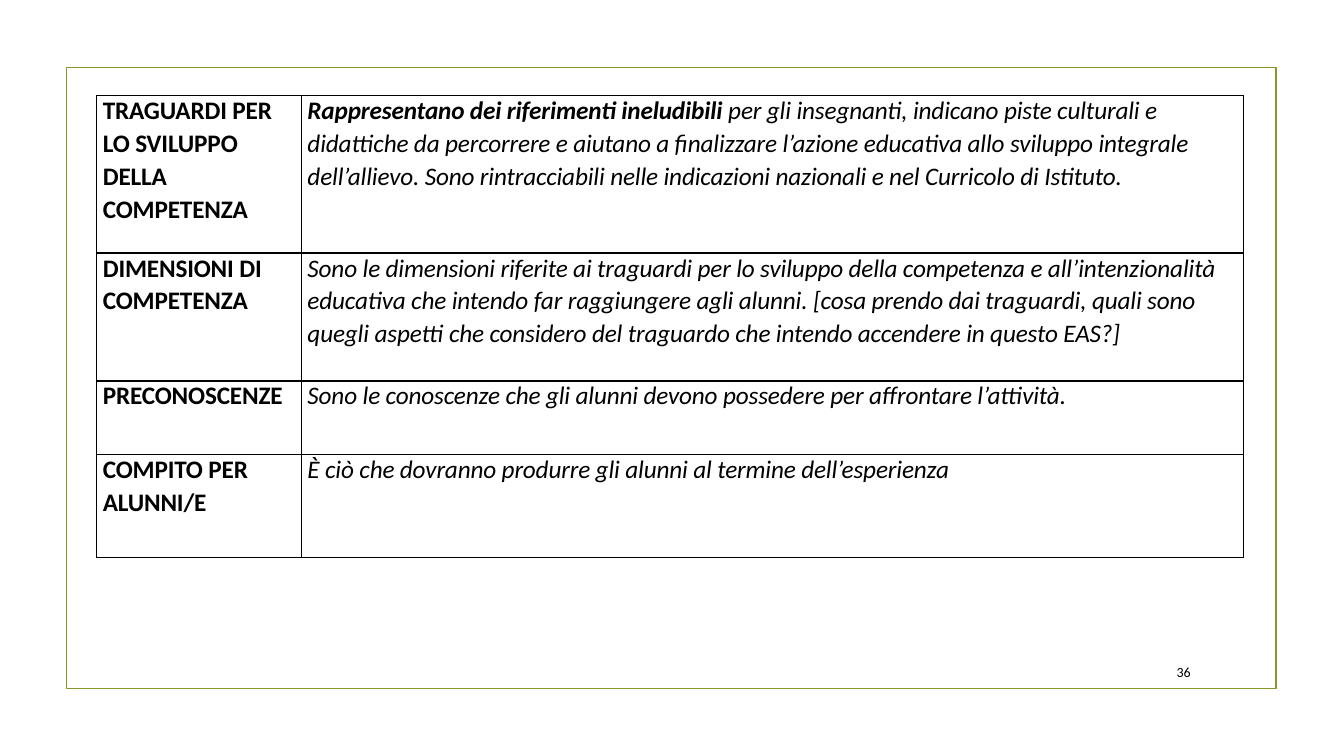
from dataclasses import dataclass
from lxml.etree import SubElement
from pptx import Presentation
from pptx.dml.color import RGBColor
from pptx.enum.shapes import MSO_SHAPE
from pptx.oxml.ns import qn
from pptx.util import Pt


@dataclass(frozen=True)
class Theme:
    font: str = "Calibri"
    ink: str = "000000"
    frame: str = "83992A"
    body: int = 18
    small: int = 10
    rule: float = 1
    edge: float = 1.25
    lead: float = 1.07


THEME = Theme()
SCALE = 9144
ROWS = [
    (156,
     [["TRAGUARDI PER"], ["LO SVILUPPO DELLA COMPETENZA"]],
     [["*Rappresentano dei riferimenti ineludibili ",
       "per gli insegnanti, indicano piste culturali e"],
      ["didattiche da percorrere e aiutano a finalizzare l’azione educativa "
       "allo sviluppo integrale dell’allievo. Sono rintracciabili nelle "
       "indicazioni nazionali e nel Curricolo di Istituto."]]),
    (127,
     [["DIMENSIONI DI"], ["COMPETENZA"]],
     [["Sono le dimensioni riferite ai traguardi per lo sviluppo della "
       "competenza e all’intenzionalità"],
      ["educativa che intendo far raggiungere agli alunni. [cosa prendo dai "
       "traguardi, quali sono"],
      ["quegli aspetti che considero del traguardo che intendo accendere in "
       "questo EAS?]"]]),
    (73,
     [["PRECONOSCENZE"]],
     [["Sono le conoscenze che gli alunni devono possedere per affrontare "
       "l’attività."]]),
    (102,
     [["COMPITO PER"], ["ALUNNI/E"]],
     [["È ciò che dovranno produrre gli alunni al termine dell’esperienza"]]),
]


def px(num):
    return int(num * SCALE)


def write(frame, paras, size=THEME.body, bold=False, italic=False,
          first=None, lead=THEME.lead):
    for pos, runs in enumerate(paras):
        para = frame.add_paragraph() if pos else frame.paragraphs[0]
        para.line_spacing = lead if pos else first
        for text in runs:
            run = para.add_run()
            run.text = text.lstrip("*")
            font = run.font
            font.name, font.size = THEME.font, Pt(size)
            font.bold = bold or text.startswith("*")
            font.italic = italic
            font.color.rgb = RGBColor.from_string(THEME.ink)
            run._r.get_or_add_rPr().set("spc", "-10")


def border(cell):
    props = cell._tc.get_or_add_tcPr()
    for side in ("lnL", "lnR", "lnT", "lnB"):
        line = SubElement(props, qn("a:" + side), w=str(Pt(THEME.rule)))
        fill = SubElement(line, qn("a:solidFill"))
        SubElement(fill, qn("a:srgbClr"), val=THEME.ink)
    cell.fill.background()


def outline(slide, left, top, width, height):
    box = slide.shapes.add_shape(
        MSO_SHAPE.RECTANGLE, px(left), px(top), px(width), px(height))
    box.shadow.inherit = False
    box.fill.background()
    box.line.color.rgb = RGBColor.from_string(THEME.frame)
    box.line.width = Pt(THEME.edge)


def grid(slide, left, top, width, label):
    height = sum(row[0] for row in ROWS)
    table = slide.shapes.add_table(
        len(ROWS), 2, px(left), px(top), px(width), px(height)).table
    table.first_row = table.horz_banding = False
    table.columns[0].width = px(label)
    table.columns[1].width = px(width - label)
    for pos, (tall, name, note) in enumerate(ROWS):
        table.rows[pos].height = px(tall)
        for col, paras in enumerate((name, note)):
            cell = table.cell(pos, col)
            cell.margin_left = px(6)
            cell.margin_top = cell.margin_right = cell.margin_bottom = 0
            write(cell.text_frame, paras, bold=col == 0, italic=col == 1)
            border(cell)


def number(slide, left, top, width, height, text):
    frame = slide.shapes.add_textbox(
        px(left), px(top), px(width), px(height)).text_frame
    frame.word_wrap = True
    frame.margin_left = px(4)
    frame.margin_top = frame.margin_right = frame.margin_bottom = 0
    write(frame, [[text]], size=THEME.small, first=Pt(10.4))


def main():
    deck = Presentation()
    deck.slide_width, deck.slide_height = px(1333), px(750)
    slide = deck.slides.add_slide(deck.slide_layouts[6])
    outline(slide, 66, 67, 1200, 616)
    grid(slide, 96, 95, 1137, 203)
    number(slide, 1163, 661, 22, 17, "36")
    deck.save("out.pptx")


if __name__ == "__main__":
    main()
